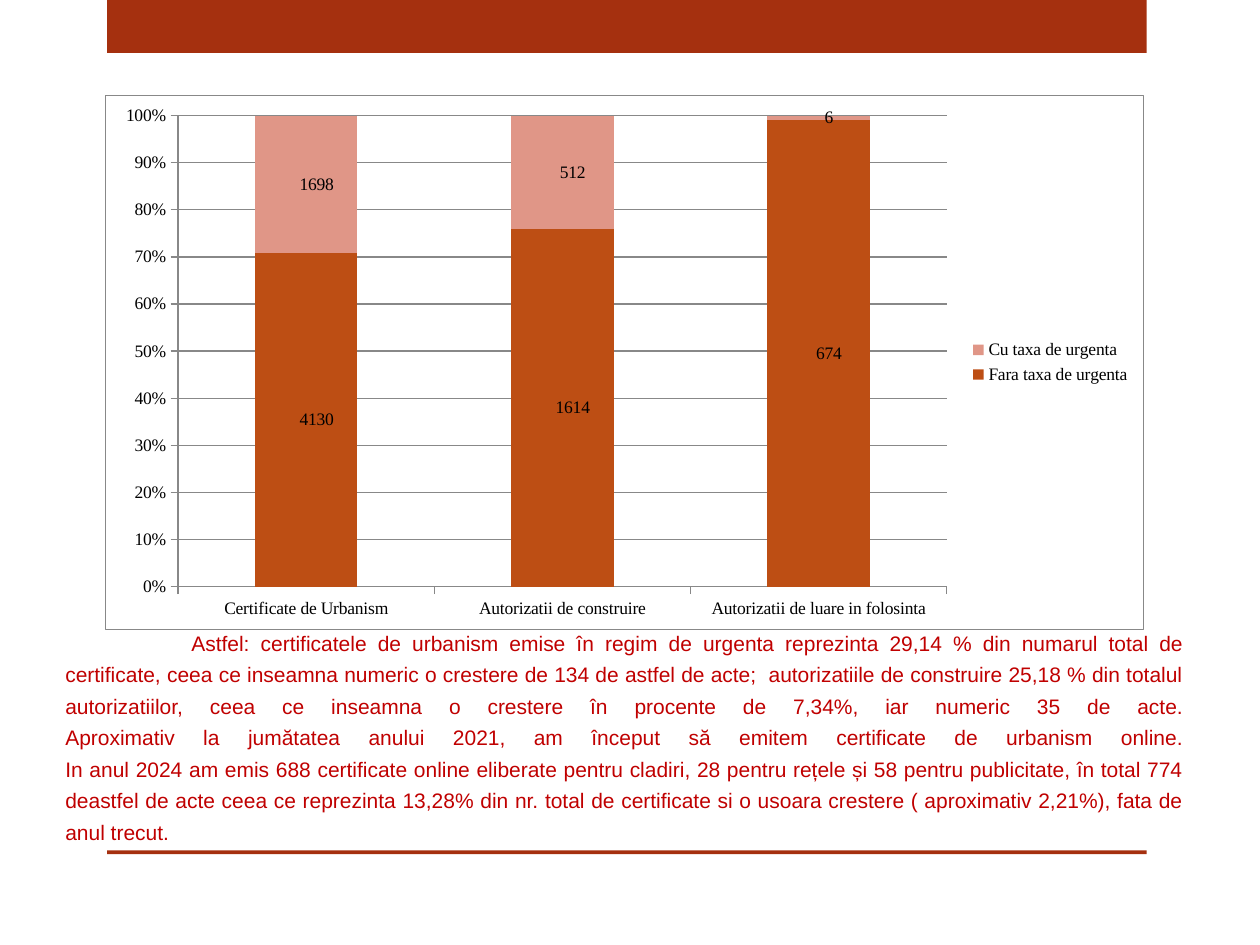
"""Build a slide with a stacked chart of permits and a note below it."""
from pptx import Presentation
from pptx.chart.data import CategoryChartData
from pptx.dml.color import RGBColor
from pptx.enum.chart import XL_CHART_TYPE, XL_LEGEND_POSITION, XL_TICK_MARK
from pptx.enum.shapes import MSO_SHAPE
from pptx.enum.text import MSO_ANCHOR, PP_ALIGN
from pptx.oxml import parse_xml
from pptx.oxml.ns import nsdecls, qn
from pptx.util import Inches, Pt

RECT = MSO_SHAPE.RECTANGLE
STACK = XL_CHART_TYPE.COLUMN_STACKED_100
RIGHT = XL_LEGEND_POSITION.RIGHT
OUT = XL_TICK_MARK.OUTSIDE
BOTTOM = MSO_ANCHOR.BOTTOM
JUST = PP_ALIGN.JUSTIFY

RUST, RED, GREY, BLACK = "A5300F", "C00000", "888888", "000000"
BARS = [(0.85, 0, 8.25, 0.42), (0.85, 6.75, 8.25, 0.03)]
CHART = (0.83, 0.75, 8.25, 4.25)
NOTE = (0.42, 5, 9.08, 1.75)
SHIFT = 0.01
CATS = ["Certificate de Urbanism", "Autorizatii de construire",
        "Autorizatii de luare in folosinta"]
SERIES = [
    ("Fara taxa de urgenta", (4130, 1614, 674), "BD4E14"),
    ("Cu taxa de urgenta", (1698, 512, 6), "E09687"),
]
LINES = [
    "Astfel: certificatele de urbanism emise în regim de urgenta reprezinta "
    "29,14 % din numarul total de certificate, ceea ce inseamna numeric o "
    "crestere de 134 de astfel de acte;  autorizatiile de construire 25,18 % "
    "din totalul autorizatiilor, ceea ce inseamna o crestere în procente de "
    "7,34%, iar numeric 35 de acte.",
    "Aproximativ la jumătatea anului 2021, am început să emitem certificate "
    "de urbanism online.",
    "In anul 2024 am emis 688 certificate online eliberate pentru cladiri, "
    "28 pentru rețele și 58 pentru publicitate, în total 774 deastfel de acte "
    "ceea ce reprezinta 13,28% din nr. total de certificate si o usoara "
    "crestere ( aproximativ 2,21%), fata de anul trecut.",
]


def rgb(code):
    return RGBColor.from_string(code)


def place(box):
    return [Inches(v) for v in box]


def style(font, name, size, color):
    font.name, font.size, font.bold = name, Pt(size), False
    font.color.rgb = rgb(color)


def rule(line):
    line.color.rgb = rgb(GREY)
    line.width = Pt(0.75)


def add_bar(slide, box):
    bar = slide.shapes.add_shape(RECT, *place(box))
    bar.shadow.inherit = False
    bar.fill.solid()
    bar.fill.fore_color.rgb = rgb(RUST)
    bar.line.fill.background()


def shift_label(labels, i):
    flags = "".join(
        f'<c:show{key} val="{int(key == "Val")}"/>'
        for key in ("LegendKey", "Val", "CatName", "SerName", "Percent",
                    "BubbleSize"))
    labels.insert(i, parse_xml(
        f'<c:dLbl {nsdecls("c")}><c:idx val="{i}"/><c:layout><c:manualLayout>'
        f'<c:x val="{SHIFT}"/><c:y val="0"/></c:manualLayout></c:layout>'
        f'{flags}</c:dLbl>'))


def add_chart(slide):
    data = CategoryChartData()
    data.categories = CATS
    for name, vals, _ in SERIES:
        data.add_series(name, vals)
    chart = slide.shapes.add_chart(STACK, *place(CHART), data).chart
    style(chart.font, "Times New Roman", 10, BLACK)
    chart.has_title = False
    chart.has_legend = True
    chart.legend.position = RIGHT
    chart.legend.include_in_layout = False
    plot = chart.plots[0]
    plot.gap_width, plot.overlap = 150, 100
    plot.vary_by_categories = False
    for axis in (chart.category_axis, chart.value_axis):
        axis.major_tick_mark = OUT
        rule(axis.format.line)
    axis.has_major_gridlines = True
    rule(axis.major_gridlines.format.line)
    axis.tick_labels.number_format = "0%"
    axis.tick_labels.number_format_is_linked = False
    for ser, (_, vals, color) in zip(plot.series, SERIES):
        ser.format.fill.solid()
        ser.format.fill.fore_color.rgb = rgb(color)
        labels = ser.data_labels
        labels.show_value = True
        style(labels.font, "Times New Roman", 10, BLACK)
        for i in range(len(vals)):
            shift_label(labels._element, i)
    chart.element.find(qn("c:chart")).addnext(parse_xml(
        f'<c:spPr {nsdecls("c", "a")}><a:noFill/><a:ln w="{Pt(0.75)}">'
        f'<a:solidFill><a:srgbClr val="{GREY}"/></a:solidFill></a:ln></c:spPr>'))


def add_note(slide):
    frame = slide.shapes.add_textbox(*place(NOTE)).text_frame
    frame.word_wrap = True
    frame.vertical_anchor = BOTTOM
    par = frame.paragraphs[0]
    par.text = "\v".join(LINES)
    par.alignment = JUST
    par.line_spacing = 1.25
    style(par.font, "Arial", 12, RED)
    props = par._p.get_or_add_pPr()
    props.set("marL", "0")
    props.set("indent", str(Inches(1)))


def main():
    deck = Presentation()
    deck.slide_width, deck.slide_height = Inches(10), Inches(7.5)
    slide = deck.slides.add_slide(deck.slide_layouts[6])
    for box in BARS:
        add_bar(slide, box)
    add_chart(slide)
    add_note(slide)
    deck.save("out.pptx")


if __name__ == "__main__":
    main()
